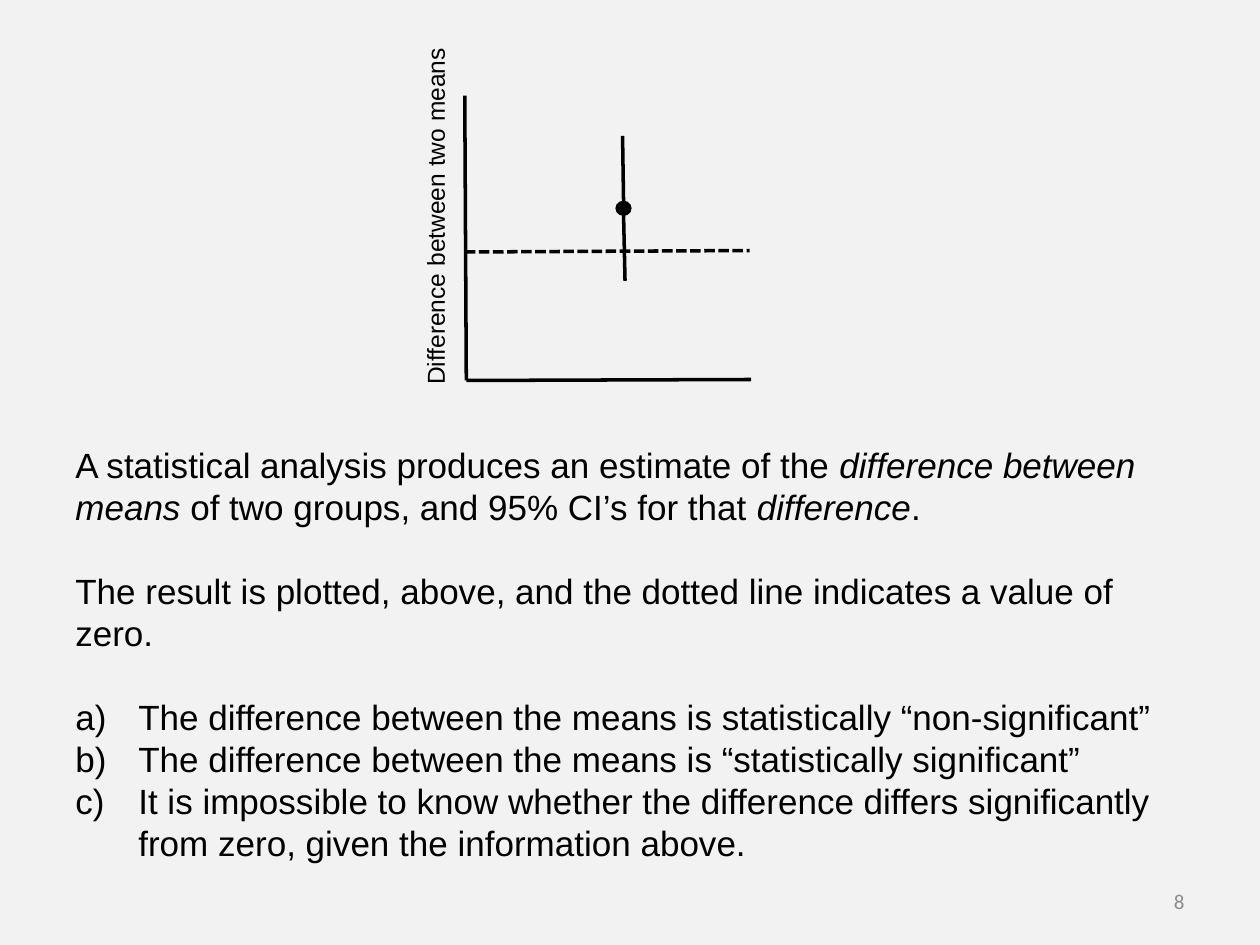
from lxml.etree import SubElement
from pptx import Presentation
from pptx.dml.color import RGBColor
from pptx.enum.dml import MSO_LINE
from pptx.enum.shapes import MSO_CONNECTOR, MSO_SHAPE
from pptx.enum.text import MSO_ANCHOR, PP_ALIGN
from pptx.oxml.ns import qn
from pptx.util import Cm, Pt

COLORS = {"background": "F2F2F2", "ink": "000000", "page": "8C8C8C"}

INTRO = [
    ("A statistical analysis produces an estimate of the ", False),
    ("difference between means ", True),
    ("of two groups, and 95% CI’s for that ", False),
    ("difference", True),
    (".", False),
]
RESULT = "The result is plotted, above, and the dotted line indicates a value of zero."
ANSWERS = [
    "The difference between the means is statistically “non-significant”",
    "The difference between the means is “statistically significant”",
    "It is impossible to know whether the difference differs significantly "
    "from zero, given the information above.",
]


def color(name):
    """Return the named colour."""
    return RGBColor.from_string(COLORS[name])


def add_text_box(s, x, y, w, h, wrap=True, anchor=MSO_ANCHOR.MIDDLE):
    """Add an empty text box measured in centimetres."""
    sp = s.shapes.add_textbox(Cm(x), Cm(y), Cm(w), Cm(h))
    sp.text_frame.word_wrap = wrap
    sp.text_frame.vertical_anchor = anchor
    return sp


def add_run(p, text, size, font="Arial", ink="ink", italic=False):
    """Append a formatted run to a paragraph."""
    r = p.add_run()
    r.text = text
    r.font.size = Pt(size)
    r.font.name = font
    r.font.italic = italic
    r.font.color.rgb = color(ink)


def number_paragraph(p):
    """Give a paragraph an a), b), c) label and a hanging indent."""
    pPr = p._p.get_or_add_pPr()
    pPr.set("marL", str(Cm(1.27)))
    pPr.set("indent", str(-Cm(1.27)))
    SubElement(pPr, qn("a:buFont"), typeface="+mj-lt")
    SubElement(pPr, qn("a:buAutoNum"), type="alphaLcParenR")


def add_line(s, x1, y1, x2, y2, dash=None):
    """Draw a straight line between two points in centimetres."""
    sp = s.shapes.add_connector(MSO_CONNECTOR.STRAIGHT, Cm(x1), Cm(y1), Cm(x2), Cm(y2))
    sp.line.color.rgb = color("ink")
    sp.line.width = Pt(2)
    if dash:
        sp.line.dash_style = dash
    SubElement(sp._element.spPr, qn("a:effectLst"))


def add_question(s):
    """Write the explanation and the three possible answers."""
    tf = add_text_box(s, 1.27, 8.69, 22.86, 8.97).text_frame
    paragraphs = [INTRO, [(RESULT, False)]] + [[(a, False)] for a in ANSWERS]
    for i, runs in enumerate(paragraphs):
        p = tf.add_paragraph() if i else tf.paragraphs[0]
        p.line_spacing = Pt(24)
        p.space_before = Pt(24 if i in (1, 2) else 0)
        if i >= 2:
            number_paragraph(p)
        for text, italic in runs:
            add_run(p, text, 20, italic=italic)


def add_plot(s):
    """Draw the axes, the zero line and the estimate with its interval."""
    sp = s.shapes.add_shape(MSO_SHAPE.OVAL, Cm(12.42), Cm(4.06), Cm(0.3), Cm(0.28))
    sp.shadow.inherit = False
    sp.fill.solid()
    sp.fill.fore_color.rgb = color("ink")
    sp.line.color.rgb = color("ink")
    sp.line.width = Pt(0.75)

    add_line(s, 12.57, 4.06, 12.55, 2.74)
    add_line(s, 12.57, 4.32, 12.6, 5.66)
    add_line(s, 9.37, 1.93, 9.4, 7.67)
    add_line(s, 9.4, 7.67, 15.14, 7.65)
    add_line(s, 9.37, 5.08, 15.11, 5.05, MSO_LINE.SQUARE_DOT)

    label = add_text_box(s, 5.11, 3.91, 7.34, 0.86, wrap=False, anchor=MSO_ANCHOR.TOP)
    label.rotation = 270
    add_run(label.text_frame.paragraphs[0], "Difference between two means", 14)


def add_page_number(s):
    """Write the page number at the lower right."""
    p = add_text_box(s, 18.21, 17.65, 5.92, 1.02).text_frame.paragraphs[0]
    p.alignment = PP_ALIGN.RIGHT
    add_run(p, "8", 12, "Calibri", "page")


def main():
    """Build the slide and save it."""
    prs = Presentation()
    prs.slide_width, prs.slide_height = Cm(25.4), Cm(19.05)
    s = prs.slides.add_slide(prs.slide_layouts[6])
    s.background.fill.solid()
    s.background.fill.fore_color.rgb = color("background")
    add_page_number(s)
    add_question(s)
    add_plot(s)
    prs.save("out.pptx")


if __name__ == "__main__":
    main()
